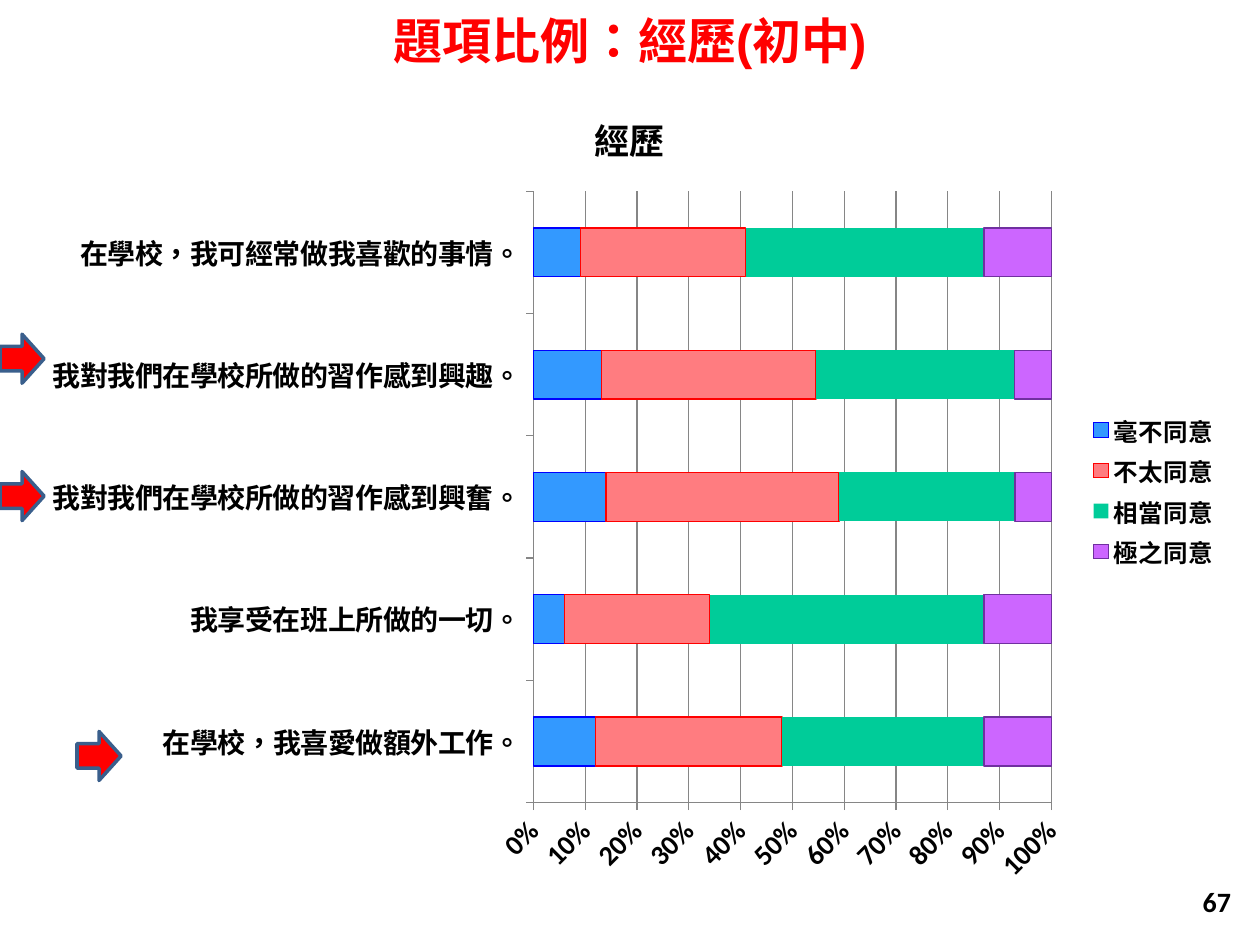
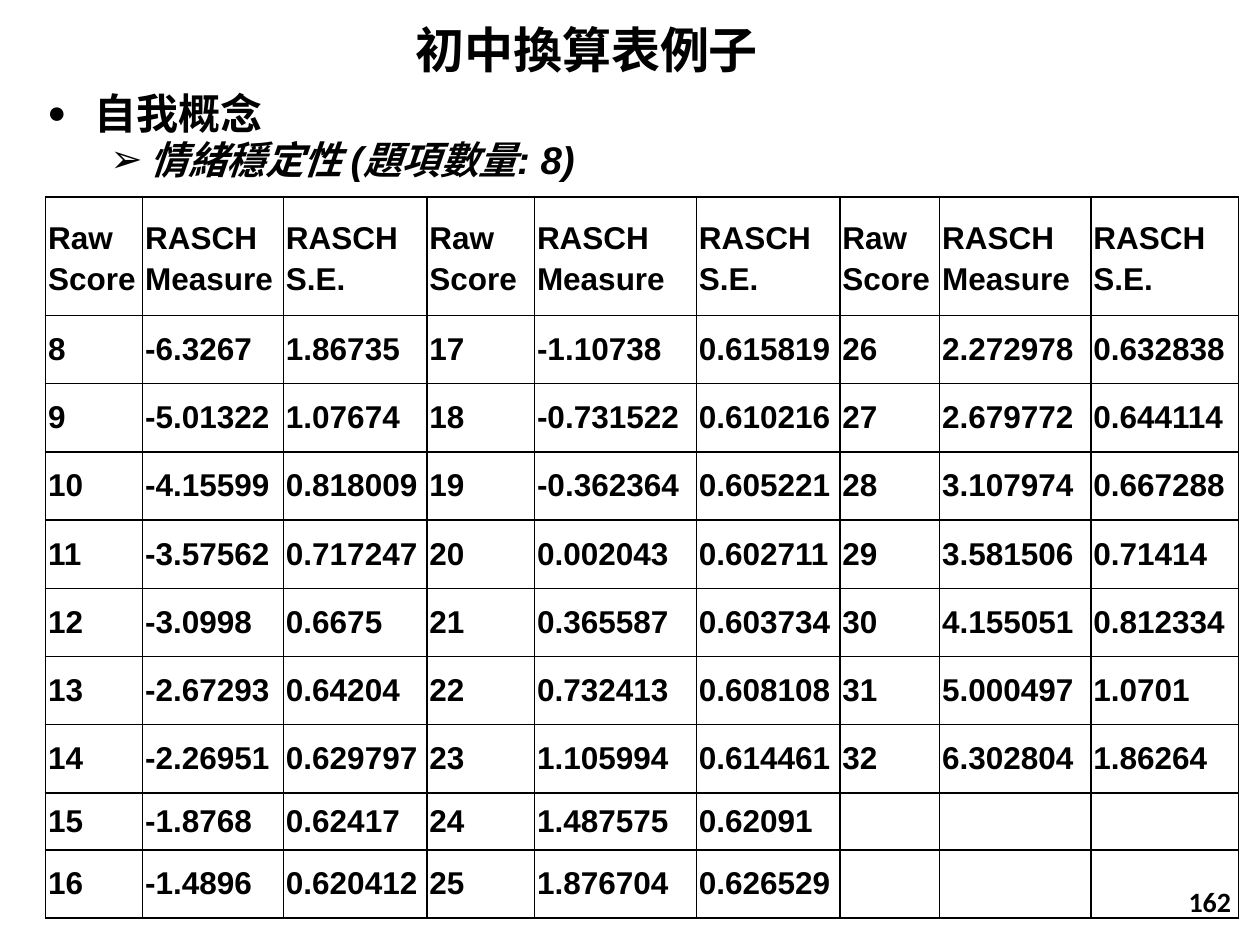
from pptx import Presentation
from pptx.chart.data import CategoryChartData
from pptx.dml.color import RGBColor
from pptx.enum.chart import XL_CHART_TYPE as CT, XL_LEGEND_POSITION as LP
from pptx.enum.lang import MSO_LANGUAGE_ID as LANG
from pptx.enum.shapes import MSO_SHAPE as SHAPE
from pptx.enum.text import MSO_ANCHOR as ANCHOR, PP_ALIGN as ALIGN
from pptx.oxml import parse_xml
from pptx.oxml.ns import nsdecls
from pptx.util import Pt

BLACK, RED, GRID = "000000", "FF0000", "868686"
ARROW_LINE = "3A5F8C"

AGREEMENT = [  # name, values, fill, line
    ("毫不同意", (12, 6, 14, 13, 9), "3399FF", "0000FF"),
    ("不太同意", (36, 28, 45, 41, 32), "FF7C80", RED),
    ("相當同意", (39, 53, 34, 38, 46), "00CC99", None),
    ("極之同意", (13, 13, 7, 7, 13), "CC66FF", "7030A0"),
]
STATEMENTS = [
    "在學校，我喜愛做額外工作。",
    "我享受在班上所做的一切。",
    "我對我們在學校所做的習作感到興奮。",
    "我對我們在學校所做的習作感到興趣。",
    "在學校，我可經常做我喜歡的事情。",
]
FIRST_SCORE, SCORES_PER_BLOCK = 8, 9
HEADINGS = ["Raw Score", "RASCH Measure", "RASCH S.E."]
RASCH = [  # measure and standard error for each raw score
    ("-6.3267", "1.86735"), ("-5.01322", "1.07674"),
    ("-4.15599", "0.818009"), ("-3.57562", "0.717247"),
    ("-3.0998", "0.6675"), ("-2.67293", "0.64204"),
    ("-2.26951", "0.629797"), ("-1.8768", "0.62417"),
    ("-1.4896", "0.620412"), ("-1.10738", "0.615819"),
    ("-0.731522", "0.610216"), ("-0.362364", "0.605221"),
    ("0.002043", "0.602711"), ("0.365587", "0.603734"),
    ("0.732413", "0.608108"), ("1.105994", "0.614461"),
    ("1.487575", "0.62091"), ("1.876704", "0.626529"),
    ("2.272978", "0.632838"), ("2.679772", "0.644114"),
    ("3.107974", "0.667288"), ("3.581506", "0.71414"),
    ("4.155051", "0.812334"), ("5.000497", "1.0701"),
    ("6.302804", "1.86264"),
]


def rgb(value):
    return RGBColor.from_string(value)


def pts(*values):
    return [Pt(v) for v in values]


class Deck:
    """Holds the shared text style and the slide being built."""

    def __init__(self):
        self.prs = Presentation()
        self.prs.slide_width, self.prs.slide_height = pts(720, 540)
        self.base = {"name": "Arial", "bold": True,
                     "language_id": LANG.TRADITIONAL_CHINESE}

    def new_slide(self):
        self.s = self.prs.slides.add_slide(self.prs.slide_layouts[6])

    def style(self, font, size, color=BLACK, **extra):
        for key, value in {**self.base, "size": Pt(size), **extra}.items():
            setattr(font, key, value)
        font.color.rgb = rgb(color)

    def run(self, p, text, size, color=BLACK, **extra):
        r = p.add_run()
        r.text = text
        self.style(r.font, size, color, **extra)

    def box(self, at, anchor=ANCHOR.TOP):
        tf = self.s.shapes.add_textbox(*pts(*at)).text_frame
        tf.word_wrap = True
        tf.vertical_anchor = anchor
        return tf

    def line(self, at, text, size, align, color=BLACK, **extra):
        p = self.box(at, ANCHOR.MIDDLE).paragraphs[0]
        p.alignment = align
        self.run(p, text, size, color, **extra)

    def title(self, text, at, color=BLACK):
        self.line(at, text, 28, ALIGN.CENTER, color)

    def page_number(self, number):
        self.line((543, 500.5, 167.5, 28.8), str(number), 16, ALIGN.RIGHT,
                  name="Calibri")

    def arrow(self, x, y):
        sp = self.s.shapes.add_shape(SHAPE.RIGHT_ARROW, *pts(x, y, 25.2, 28))
        sp.shadow.inherit = False
        sp.fill.solid()
        sp.fill.fore_color.rgb = rgb(RED)
        sp.line.color.rgb = rgb(ARROW_LINE)
        sp.line.width = Pt(2)

    def bullet(self, p, text, size, char, left, hang, percent=100, **extra):
        pPr = p._p.get_or_add_pPr()
        pPr.set("marL", str(Pt(left)))
        pPr.set("indent", str(-Pt(hang)))
        for xml in (f'<a:buSzPct {nsdecls("a")} val="{percent * 1000}"/>',
                    f'<a:buFont {nsdecls("a")} typeface="Arial"/>',
                    f'<a:buChar {nsdecls("a")} char="{char}"/>'):
            pPr.append(parse_xml(xml))
        p.line_spacing = 0.8
        self.run(p, text, size, **extra)

    def stacked_chart(self, at, title, categories, series):
        data = CategoryChartData()
        data.categories = categories
        for name, values, *_ in series:
            data.add_series(name, values)
        chart = self.s.shapes.add_chart(
            CT.BAR_STACKED_100, *pts(*at), data).chart
        self.style(chart.font, 10, name="Calibri", bold=False)

        chart.has_title = True
        self.run(chart.chart_title.text_frame.paragraphs[0], title, 20,
                 name="Calibri")
        chart.chart_title.include_in_layout = False
        chart.has_legend = True
        chart.legend.position = LP.RIGHT
        chart.legend.include_in_layout = False
        self.style(chart.legend.font, 14, name="Calibri")

        for axis in (chart.category_axis, chart.value_axis):
            self.style(axis.tick_labels.font, 16, name="Calibri")
            axis.format.line.color.rgb = rgb(GRID)
        axis = chart.value_axis
        axis.has_major_gridlines = True
        axis.major_gridlines.format.line.color.rgb = rgb(GRID)
        axis.minimum_scale, axis.maximum_scale, axis.major_unit = 0, 1, 0.1
        axis.tick_labels.number_format = "0%"
        axis.tick_labels.number_format_is_linked = False

        plot = chart.plots[0]
        plot.gap_width, plot.overlap = 150, 100
        plot.vary_by_categories = False
        for ser, (_, _, fill, line) in zip(plot.series, series):
            ser.format.fill.solid()
            ser.format.fill.fore_color.rgb = rgb(fill)
            if line:
                ser.format.line.color.rgb = rgb(line)
                ser.format.line.width = Pt(0.75)
            else:
                ser.format.line.fill.background()
        self.arrange_plot(chart.element.xpath("c:chart/c:plotArea")[0])

    def arrange_plot(self, area):
        """Fix the inner plot rectangle and slant the value labels."""
        area.xpath("c:valAx/c:txPr/a:bodyPr")[0].set("rot", "-2700000")
        for old in area.xpath("c:layout"):
            area.remove(old)
        sizes = "".join(f'<c:{k} val="{v}"/>' for k, v in
                        (("x", 0.42), ("y", 0.135), ("w", 0.43), ("h", 0.745)))
        area.insert(0, parse_xml(
            f'<c:layout {nsdecls("c")}><c:manualLayout>'
            '<c:layoutTarget val="inner"/><c:xMode val="edge"/>'
            f'<c:yMode val="edge"/>{sizes}</c:manualLayout></c:layout>'))

    def borders(self, cell, **widths):
        """Draw the sides L, R, T and B of a cell, 1 pt unless given."""
        tcPr = cell._tc.get_or_add_tcPr()
        for side in "LRTB":
            tcPr.append(parse_xml(
                f'<a:ln{side} {nsdecls("a")} w="{Pt(widths.get(side, 1))}">'
                f'<a:solidFill><a:srgbClr val="{BLACK}"/></a:solidFill>'
                f'</a:ln{side}>'))

    def table(self, at, grid, col_widths, row_heights, block):
        """Draw a grid whose blocks of columns are parted by thicker lines."""
        rows, cols = len(grid), len(grid[0])
        tbl = self.s.shapes.add_table(rows, cols, *pts(*at)).table
        tbl.first_row = tbl.horz_banding = False
        for col, width in zip(tbl.columns, col_widths):
            col.width = Pt(width)
        for row, height in zip(tbl.rows, row_heights):
            row.height = Pt(height)
        for i, texts in enumerate(grid):
            for j, text in enumerate(texts):
                cell = tbl.cell(i, j)
                self.borders(
                    cell,
                    L=1.5 if j and j % block == 0 else 1,
                    R=1.5 if j % block == block - 1 and j < cols - 1 else 1)
                cell.fill.background()
                if not text:
                    continue
                cell.vertical_anchor = ANCHOR.MIDDLE
                cell.margin_left = cell.margin_right = Pt(1.5)
                cell.margin_top = cell.margin_bottom = 0
                p = cell.text_frame.paragraphs[0]
                p.alignment = ALIGN.JUSTIFY
                if i == 0:
                    p.line_spacing = 1.15
                self.run(p, text, 18)


def conversion_grid():
    """Lay the scores out downwards in side-by-side blocks."""
    blocks = -(-len(RASCH) // SCORES_PER_BLOCK)
    width = len(HEADINGS)
    grid = [HEADINGS * blocks]
    grid += [[""] * width * blocks for _ in range(SCORES_PER_BLOCK)]
    for i, pair in enumerate(RASCH):
        block, row = divmod(i, SCORES_PER_BLOCK)
        start = block * width
        grid[row + 1][start:start + width] = [str(FIRST_SCORE + i), *pair]
    return grid


def experience_slide(deck):
    deck.new_slide()
    deck.stacked_chart((16, 46, 688, 469), "經歷", STATEMENTS, AGREEMENT)
    deck.title("題項比例：經歷(初中)", (0, 0, 720, 45.4), RED)
    deck.page_number(67)
    for x, y in ((0, 269.5), (0, 191), (44, 418)):
        deck.arrow(x, y)


def conversion_slide(deck):
    deck.new_slide()
    deck.title("初中換算表例子", (16, 0, 638.5, 56))
    tf = deck.box((20, 52, 552, 68.5))
    deck.bullet(tf.paragraphs[0], "自我概念", 24, "●", 27, 27, 75)
    p = tf.add_paragraph()
    p.level = 1
    p.space_before = Pt(4.4)
    deck.bullet(p, "情緒穩定性 (題項數量: 8)", 22, "➢", 58.5, 22.5, italic=True)
    col_widths = [55.5, 80.5, 82, 61.5, 92.5, 82, 57, 86.5, 84.5]
    row_heights = [67.8] + [39] * 7 + [32.5, 39]
    deck.table((26, 112.5, 682, 412.5), conversion_grid(), col_widths,
               row_heights, len(HEADINGS))
    deck.page_number(162)


def main():
    deck = Deck()
    experience_slide(deck)
    conversion_slide(deck)
    deck.prs.save("out.pptx")


if __name__ == "__main__":
    main()
